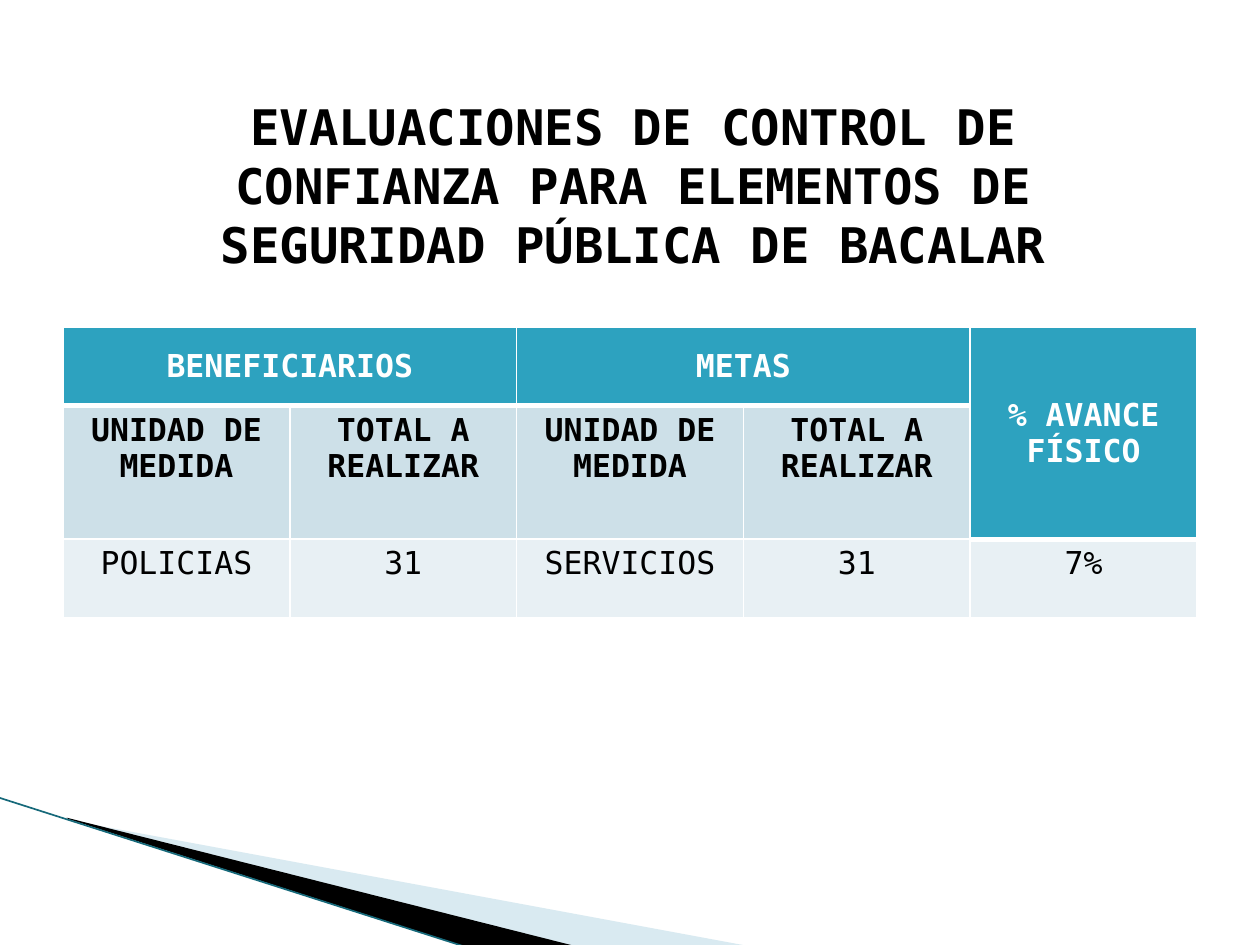
from dataclasses import dataclass

from lxml.etree import SubElement
from pptx import Presentation
from pptx.dml.color import RGBColor
from pptx.enum.shapes import MSO_CONNECTOR
from pptx.enum.text import MSO_ANCHOR, PP_ALIGN
from pptx.oxml import parse_xml
from pptx.oxml.ns import nsdecls, qn
from pptx.util import Inches, Pt

# The slide is a grid of 10 columns by 7.5 rows
SLIDE_WIDTH, SLIDE_HEIGHT = Inches(10), Inches(7.5)
COLUMN, ROW = SLIDE_WIDTH / 10, SLIDE_HEIGHT / 7.5

FONT = "DejaVu Sans Mono"
BLACK = RGBColor(0x00, 0x00, 0x00)
WHITE = RGBColor(0xFF, 0xFF, 0xFF)
TEAL = RGBColor(0x2D, 0xA2, 0xBF)
DARK_TEAL = RGBColor(0x16, 0x69, 0x7A)
PALE_BLUE = RGBColor(0xA0, 0xCB, 0xDC)
SUBHEAD_BLUE = RGBColor(0xCD, 0xE0, 0xE8)
BODY_BLUE = RGBColor(0xE8, 0xF0, 0xF4)


@dataclass(frozen=True)
class CellStyle:
    fill: RGBColor
    color: RGBColor
    bold: bool
    anchor: MSO_ANCHOR = MSO_ANCHOR.TOP
    bottom_border: int = 1


@dataclass(frozen=True)
class Wedge:
    points: tuple
    color: RGBColor
    opacity: int = 100


HEADER = CellStyle(TEAL, WHITE, True, MSO_ANCHOR.MIDDLE, 3)
SUBHEAD = CellStyle(SUBHEAD_BLUE, BLACK, True)
BODY = CellStyle(BODY_BLUE, BLACK, False)

TITLE = ("EVALUACIONES DE CONTROL DE CONFIANZA PARA ELEMENTOS DE "
         "SEGURIDAD PÚBLICA DE BACALAR")
TABLE_ROWS = (
    ("BENEFICIARIOS", "", "METAS", "", "% AVANCE FÍSICO"),
    ("UNIDAD DE MEDIDA", "TOTAL A REALIZAR") * 2 + ("",),
    ("POLICIAS", "31", "SERVICIOS", "31", "7%"),
)
ROW_STYLES = (HEADER, SUBHEAD, BODY)
ROW_HEIGHTS = (0.62, 1.06, 0.62)
MERGES = (((0, 0), (0, 1)), ((0, 2), (0, 3)), ((0, 4), (1, 4)))

WEDGES = (
    Wedge(((0.55, 6.51), (5.95, 7.51), (4.56, 7.51), (0.55, 6.5)), PALE_BLUE, 40),
    Wedge(((0.53, 6.49), (4.57, 7.51), (3.72, 7.52), (0.54, 6.5)), BLACK),
)


def place(column: float, row: float) -> tuple[int, int]:
    return round(column * COLUMN), round(row * ROW)


def format_paragraph(paragraph, **font_values) -> None:
    paragraph.alignment = PP_ALIGN.CENTER
    color = font_values.pop("color")
    for name, value in {"name": FONT, **font_values}.items():
        setattr(paragraph.font, name, value)
    paragraph.font.color.rgb = color


def draw_wedge(slide, wedge: Wedge) -> None:
    start, *others = [place(*point) for point in wedge.points]
    builder = slide.shapes.build_freeform(*start)
    builder.add_line_segments(others, close=True)
    shape = builder.convert_to_shape()
    shape.shadow.inherit = False
    shape.fill.solid()
    shape.fill.fore_color.rgb = wedge.color
    shape.line.fill.background()
    if wedge.opacity < 100:
        color = shape.fill._xPr.find(qn("a:solidFill"))[0]
        SubElement(color, qn("a:alpha")).set("val", str(wedge.opacity * 1000))


def draw_edge_line(slide) -> None:
    line = slide.shapes.add_connector(
        MSO_CONNECTOR.STRAIGHT, *place(-0.01, 6.33), *place(3.71, 7.52))
    line.line.color.rgb = DARK_TEAL
    line.line.width = Pt(0.95)
    SubElement(line._element.spPr, qn("a:effectLst"))


def set_borders(cell, bottom: int) -> None:
    widths = {"lnL": 1, "lnR": 1, "lnT": 1, "lnB": bottom}
    for index, (tag, width) in enumerate(widths.items()):
        border = parse_xml(
            f'<a:{tag} {nsdecls("a")} w="{Pt(width)}"><a:solidFill>'
            f'<a:srgbClr val="{WHITE}"/></a:solidFill></a:{tag}>')
        cell._tc.get_or_add_tcPr().insert(index, border)


def format_cell(cell, text: str, style: CellStyle) -> None:
    cell.text = text
    cell.vertical_anchor = style.anchor
    cell.fill.solid()
    cell.fill.fore_color.rgb = style.fill
    format_paragraph(cell.text_frame.paragraphs[0],
                     size=Pt(18), bold=style.bold, color=style.color)
    set_borders(cell, style.bottom_border)


def draw_table(slide) -> None:
    table = slide.shapes.add_table(
        len(TABLE_ROWS), len(TABLE_ROWS[0]),
        *place(0.5, 2.6), *place(9, sum(ROW_HEIGHTS))).table
    for row, height in zip(table.rows, ROW_HEIGHTS):
        row.height = round(height * ROW)
    for first, last in MERGES:
        table.cell(*first).merge(table.cell(*last))
    for row, (texts, style) in enumerate(zip(TABLE_ROWS, ROW_STYLES)):
        for column, text in enumerate(texts):
            # The last heading spans both heading rows
            spans_down = (row, column) == MERGES[-1][1]
            format_cell(table.cell(row, column), text,
                        HEADER if spans_down else style)


def set_title(slide) -> None:
    title = slide.shapes.title
    title.left, title.top = place(0.91, 0.68)
    title.width, title.height = place(8.23, 1.57)
    title.text_frame.text = TITLE
    title.text_frame.word_wrap = True
    title.text_frame.vertical_anchor = MSO_ANCHOR.MIDDLE
    format_paragraph(title.text_frame.paragraphs[0],
                     size=Pt(28), bold=True, color=BLACK)


def main() -> None:
    presentation = Presentation()
    presentation.slide_width, presentation.slide_height = SLIDE_WIDTH, SLIDE_HEIGHT
    slide = presentation.slides.add_slide(presentation.slide_layouts[5])

    # Corner decoration
    for wedge in WEDGES:
        draw_wedge(slide, wedge)
    draw_edge_line(slide)

    # Content
    draw_table(slide)
    set_title(slide)
    presentation.save("out.pptx")


if __name__ == "__main__":
    main()
